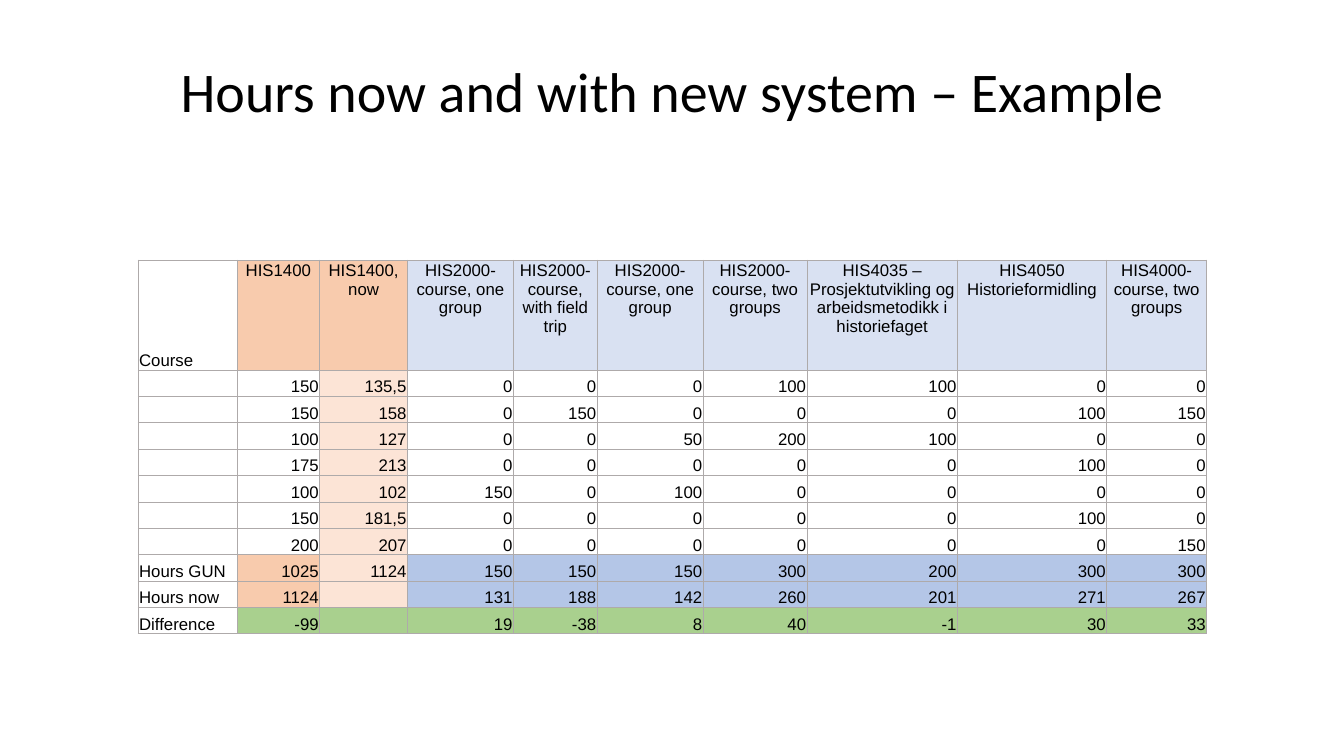
from lxml import etree
from pptx import Presentation
from pptx import util as u
from pptx.dml.color import RGBColor
from pptx.enum import text
from pptx.oxml import ns

BLACK, BORDER = "000000", "AEAAAA"
ORANGE, PALE_ORANGE = "F8CBAD", "FCE4D6"
BLUE, PALE_BLUE, GREEN = "B4C6E7", "D9E1F2", "A9D08E"

COLUMN_WIDTHS = [0.98, 0.82, 0.87, 1.05, 0.83, 1.05, 1.03, 1.49, 1.48, 0.99]
HEADER_HEIGHT = 1.09
HOURS = [
    ["Course", "HIS1400", "HIS1400, now", "HIS2000-course, one group",
     "HIS2000-course, with field trip", "HIS2000-course, one group",
     "HIS2000-course, two groups",
     "HIS4035 – Prosjektutvikling og arbeidsmetodikk i historiefaget",
     "HIS4050 Historieformidling", "HIS4000-course, two groups"],
    ["", "150", "135,5", "0", "0", "0", "100", "100", "0", "0"],
    ["", "150", "158", "0", "150", "0", "0", "0", "100", "150"],
    ["", "100", "127", "0", "0", "50", "200", "100", "0", "0"],
    ["", "175", "213", "0", "0", "0", "0", "0", "100", "0"],
    ["", "100", "102", "150", "0", "100", "0", "0", "0", "0"],
    ["", "150", "181,5", "0", "0", "0", "0", "0", "100", "0"],
    ["", "200", "207", "0", "0", "0", "0", "0", "0", "150"],
    ["Hours GUN", "1025", "1124", "150", "150", "150", "300", "200", "300", "300"],
    ["Hours now", "1124", "", "131", "188", "142", "260", "201", "271", "267"],
    ["Difference", "-99", "", "19", "-38", "8", "40", "-1", "30", "33"],
]
FIRST_TOTAL = 8
DIFFERENCE = 10


def color(value):
    return RGBColor.from_string(value)


def style_font(font, name, size):
    font.name = name
    font.size = u.Pt(size)
    font.color.rgb = color(BLACK)


def cell_color(row, column):
    """Fill of a table cell, or None where the page shows through."""
    if column == 0:
        return None
    if row == 0:
        return ORANGE if column < 3 else PALE_BLUE
    if row == DIFFERENCE:
        return GREEN
    if column == 2:
        return PALE_ORANGE
    if row >= FIRST_TOTAL:
        return ORANGE if column == 1 else BLUE
    return None


def add_borders(cell):
    properties = cell._tc.get_or_add_tcPr()
    for side in ("a:lnL", "a:lnR", "a:lnT", "a:lnB"):
        line = etree.SubElement(properties, ns.qn(side), w=str(u.Pt(0.5)))
        fill = etree.SubElement(line, ns.qn("a:solidFill"))
        etree.SubElement(fill, ns.qn("a:srgbClr"), val=BORDER)


def fill_cell(cell, row, column):
    add_borders(cell)
    shade = cell_color(row, column)
    if shade:
        cell.fill.solid()
        cell.fill.fore_color.rgb = color(shade)
    else:
        cell.fill.background()
    cell.margin_left = cell.margin_right = cell.margin_top = u.Inches(0.01)
    cell.margin_bottom = 0
    is_heading = row == 0 and column > 0
    cell.vertical_anchor = text.MSO_ANCHOR.TOP if is_heading else text.MSO_ANCHOR.BOTTOM

    para = cell.text_frame.paragraphs[0]
    para.text = HOURS[row][column]
    if is_heading:
        para.alignment = text.PP_ALIGN.CENTER
    else:
        para.alignment = text.PP_ALIGN.RIGHT if column else text.PP_ALIGN.LEFT
    for span in para.runs:
        style_font(span.font, "Arial", 12)
    if not para.runs:
        # Keeps an empty cell from stretching its row
        etree.SubElement(para._p, ns.qn("a:endParaRPr"), sz="1200")


def add_title(page, left, top, width, height):
    box = page.shapes.add_textbox(*map(u.Inches, (left, top, width, height)))
    frame = box.text_frame
    frame.word_wrap = True
    frame.vertical_anchor = text.MSO_ANCHOR.MIDDLE
    frame.text = "Hours now and with new system – Example"
    para = frame.paragraphs[0]
    para.alignment = text.PP_ALIGN.CENTER
    para.line_spacing = 0.9
    style_font(para.runs[0].font, "Calibri", 40)


def add_hours_table(page, left, top, width, height):
    frame = page.shapes.add_table(len(HOURS), len(COLUMN_WIDTHS),
                                  *map(u.Inches, (left, top, width, height)))
    table = frame.table
    table.first_row = table.horz_banding = False
    for column, share in zip(table.columns, COLUMN_WIDTHS):
        column.width = u.Inches(width * share / sum(COLUMN_WIDTHS))
    body_height = (height - HEADER_HEIGHT) / (len(HOURS) - 1)
    for row, line in enumerate(table.rows):
        line.height = u.Inches(body_height if row else HEADER_HEIGHT)
        for column, cell in enumerate(line.cells):
            fill_cell(cell, row, column)


def main():
    deck = Presentation()
    deck.slide_width, deck.slide_height = u.Inches(13.33), u.Inches(7.5)
    page = deck.slides.add_slide(deck.slide_layouts[6])
    add_title(page, 1.25, 0.3, 10.83, 1.27)
    add_hours_table(page, 1.37, 2.58, 10.6, 3.71)
    deck.save("out.pptx")


if __name__ == "__main__":
    main()
